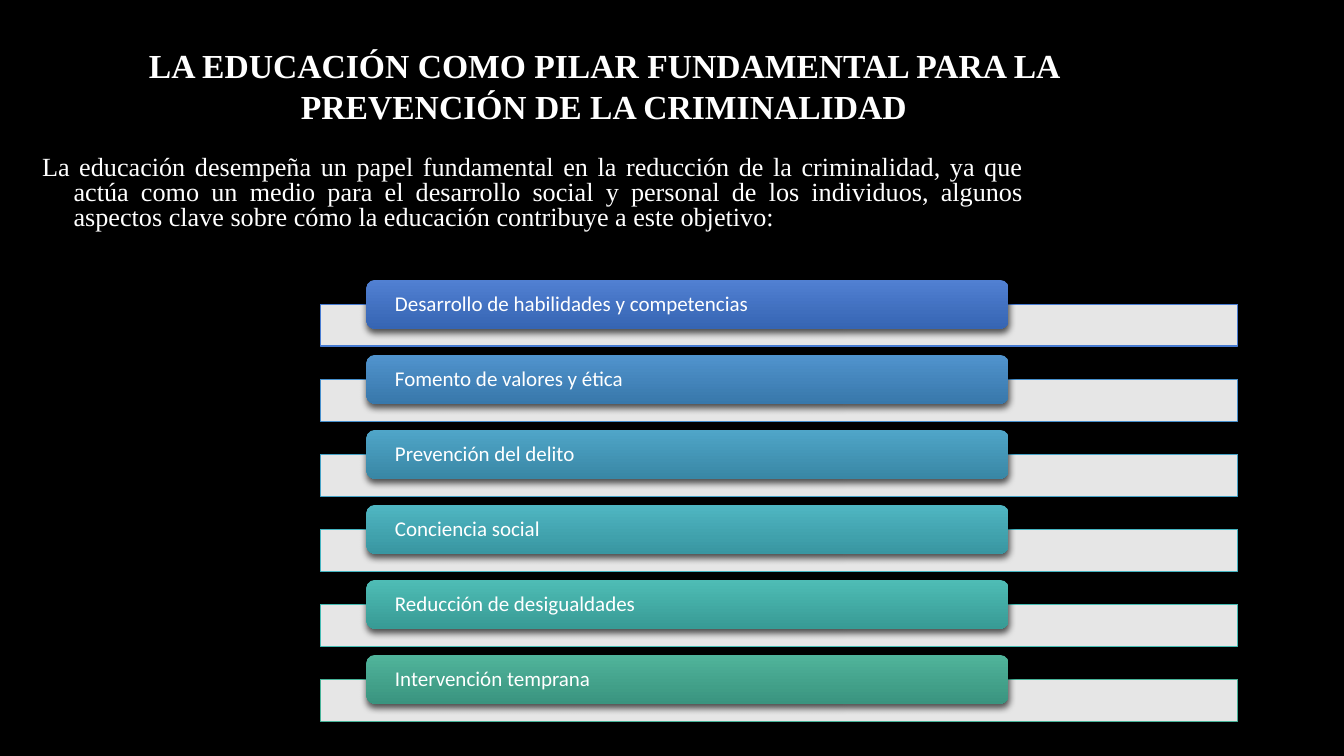
from lxml import etree
from pptx import Presentation
from pptx.dml.color import RGBColor
from pptx.enum.shapes import MSO_SHAPE
from pptx.enum.text import MSO_ANCHOR, PP_ALIGN
from pptx.oxml.ns import qn
from pptx.util import Pt

RECT, ROUND = MSO_SHAPE.RECTANGLE, MSO_SHAPE.ROUNDED_RECTANGLE
TOP, MIDDLE, BOTTOM = MSO_ANCHOR.TOP, MSO_ANCHOR.MIDDLE, MSO_ANCHOR.BOTTOM
LEFT, CENTER, JUSTIFY = PP_ALIGN.LEFT, PP_ALIGN.CENTER, PP_ALIGN.JUSTIFY

COLORS = {"black": "000000", "white": "FFFFFF"}
SERIF, SANS = "Times New Roman", "Calibri"

TITLE = "LA EDUCACIÓN COMO PILAR FUNDAMENTAL PARA LA PREVENCIÓN DE LA CRIMINALIDAD"
INTRO = ("La educación desempeña un papel fundamental en la reducción de la "
         "criminalidad, ya que actúa como un medio para el desarrollo social y "
         "personal de los individuos, algunos aspectos clave sobre cómo la "
         "educación contribuye a este objetivo:")

# Label, bar outline, tab gradient start and end
ITEMS = [
    ("Desarrollo de habilidades y competencias", "477BD1", "5180D2", "3665B3"),
    ("Fomento de valores y ética", "468FCC", "5093CD", "3878AB"),
    ("Prevención del delito", "45A2C6", "4FA5C8", "3987A5"),
    ("Conciencia social", "44B4C1", "4FB6C2", "3996A1"),
    ("Reducción de desigualdades", "44BBB3", "4EBCB5", "389B95"),
    ("Intervención temprana", "46B298", "50B49B", "3A947F"),
]


def rgb(code):
    return RGBColor.from_string(code)


def write(shape, text, font, size, align, anchor, pad, space=1.0, bold=False):
    """Put one paragraph in a shape; pad is (side, top and bottom)."""
    frame = shape.text_frame
    frame.word_wrap = True
    frame.vertical_anchor = anchor
    frame.margin_left = frame.margin_right = Pt(pad[0])
    frame.margin_top = frame.margin_bottom = Pt(pad[1])
    para = frame.paragraphs[0]
    para.alignment = align
    para.line_spacing = space
    run = para.add_run()
    run.text = text
    run.font.name, run.font.size, run.font.bold = font, Pt(size), bold
    run.font.color.rgb = rgb(COLORS["white"])
    return para


def set_alpha(parent, percent):
    etree.SubElement(parent, qn("a:alpha"), val=str(percent * 1000))


def add_shadow(shape, blur, alpha):
    """Cast a black shadow straight down."""
    shape.shadow.inherit = False
    effects = shape._element.spPr.find(qn("a:effectLst"))
    outer = etree.SubElement(
        effects, qn("a:outerShdw"), blurRad=str(Pt(blur)), dist=str(Pt(3)),
        dir="5400000", algn="ctr", rotWithShape="0")
    color = etree.SubElement(outer, qn("a:srgbClr"), val=COLORS["black"])
    set_alpha(color, alpha)


def add_title(slide, x, y, w, h):
    box = slide.shapes.add_textbox(Pt(x), Pt(y), Pt(w), Pt(h))
    write(box, TITLE, SERIF, 24, CENTER, BOTTOM, (7.2, 7.2), bold=True)


def add_intro(slide, x, y, w, h):
    box = slide.shapes.add_textbox(Pt(x), Pt(y), Pt(w), Pt(h))
    para = write(box, INTRO, SERIF, 18.7, JUSTIFY, TOP, (7.2, 7.2), 0.8)
    props = para._p.get_or_add_pPr()
    props.set("marL", str(Pt(22.5)))
    props.set("indent", str(Pt(-22.5)))


def add_item(slide, x, y, w, item):
    label, edge, start, end = item

    # Pale bar behind
    bar = slide.shapes.add_shape(RECT, Pt(x), Pt(y + 17.4), Pt(w), Pt(29.8))
    bar.fill.solid()
    bar.fill.fore_color.rgb = rgb(COLORS["white"])
    set_alpha(bar._element.spPr.find(qn("a:solidFill"))[0], 90)
    bar.line.color.rgb = rgb(edge)
    bar.line.width = Pt(0.75)
    add_shadow(bar, 4, 35)

    # Coloured tab with its label
    tab = slide.shapes.add_shape(ROUND, Pt(x + 0.05 * w), Pt(y), Pt(0.7 * w), Pt(34.8))
    tab.fill.gradient()
    tab.fill.gradient_angle = 270
    for stop, code in zip(tab.fill.gradient_stops, (start, end)):
        stop.color.rgb = rgb(code)
    tab.line.fill.background()
    add_shadow(tab, 5, 65)
    write(tab, label, SANS, 15, LEFT, MIDDLE, (18.7, 0), 0.9)


def add_list(slide, x, y, w, pitch):
    for row, item in enumerate(ITEMS):
        add_item(slide, x, y + row * pitch, w, item)


def main():
    deck = Presentation()
    deck.slide_width, deck.slide_height = Pt(960), Pt(540)
    slide = deck.slides.add_slide(deck.slide_layouts[6])
    slide.background.fill.solid()
    slide.background.fill.fore_color.rgb = rgb(COLORS["black"])
    add_title(slide, 32.4, 16.6, 797.8, 80.6)
    add_intro(slide, 23, 104.4, 715, 87.8)
    add_list(slide, 229, 200, 655.2, 53.58)
    deck.save("out.pptx")


if __name__ == "__main__":
    main()
